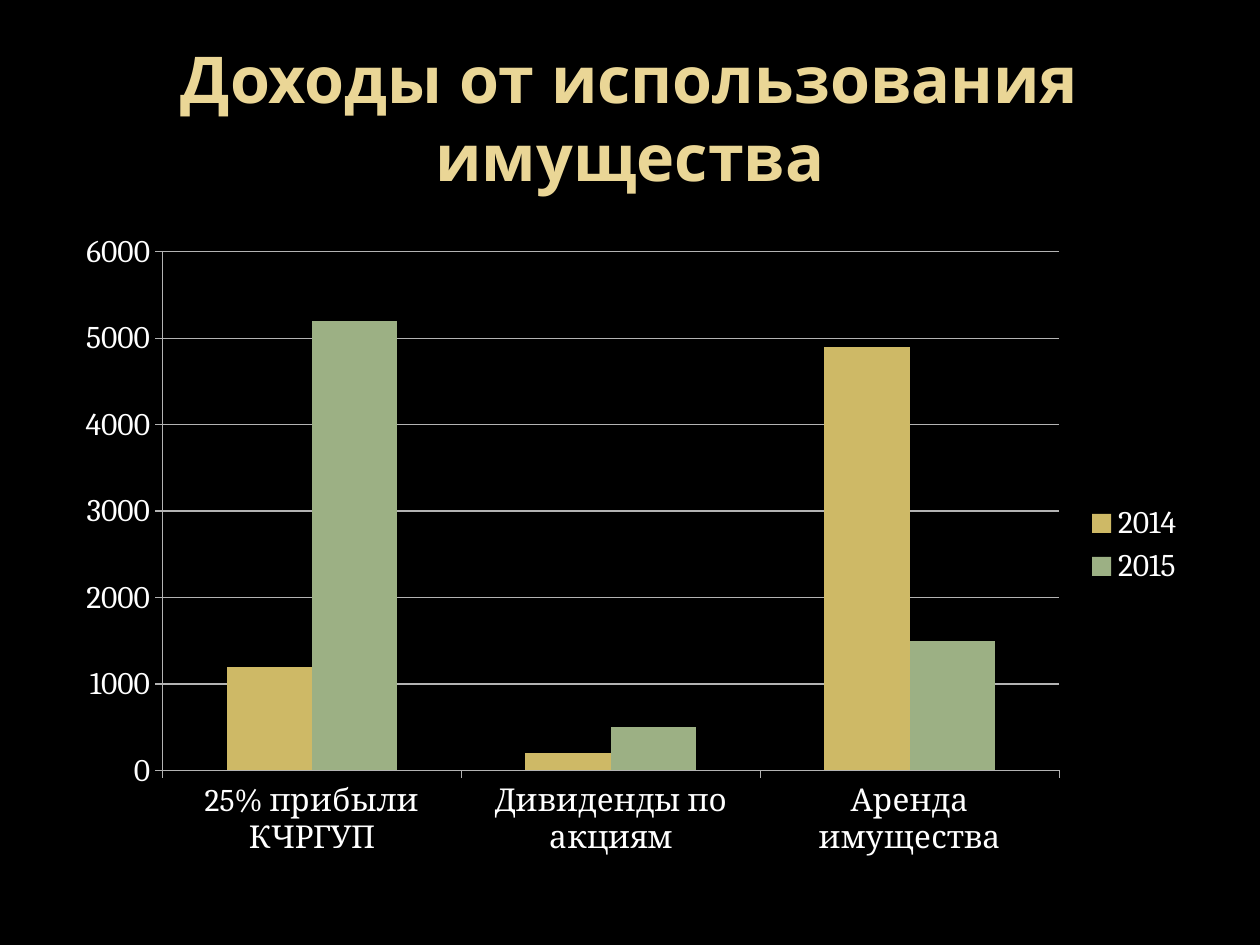
"""Build a slide with a clustered column chart of property income."""
from pptx import Presentation
from pptx import util as u
from pptx.chart import data as chart_data
from pptx.dml import color
from pptx.enum import chart as charts, text

COLORS = {
    "background": "000000",
    "title": "EAD696",
    "text": "FFFFFF",
    "line": "B3B3B3",
    "2014": "CEB966",
    "2015": "9CB084",
}
CATEGORIES = ["25% прибыли КЧРГУП", "Дивиденды по акциям", "Аренда имущества"]
SERIES = {"2014": [1200, 200, 4900], "2015": [5200, 500, 1500]}


def rgb(name):
    return color.RGBColor.from_string(COLORS[name])


presentation = Presentation()
presentation.slide_width, presentation.slide_height = u.Pt(720), u.Pt(540)
slide = presentation.slides.add_slide(presentation.slide_layouts[5])
slide.background.fill.solid()
slide.background.fill.fore_color.rgb = rgb("background")

title = slide.shapes.title
title.left, title.top, title.width, title.height = u.Pt(36), u.Pt(21.6), u.Pt(648), u.Pt(90)
title.text_frame.word_wrap = True
title.text_frame.auto_size = text.MSO_AUTO_SIZE.NONE
title.text_frame.vertical_anchor = text.MSO_ANCHOR.MIDDLE
paragraph = title.text_frame.paragraphs[0]
paragraph.alignment = text.PP_ALIGN.CENTER
run = paragraph.add_run()
run.text = "Доходы от использования имущества"
run.font.name = "Open Sans"
run.font.size = u.Pt(36.9)
run.font.bold = True
run.font.color.rgb = rgb("title")

income = chart_data.CategoryChartData()
income.categories = CATEGORIES
for name, values in SERIES.items():
    income.add_series(name, values)
chart = slide.shapes.add_chart(
    charts.XL_CHART_TYPE.COLUMN_CLUSTERED,
    u.Pt(36), u.Pt(126), u.Pt(648), u.Pt(370.8), income,
).chart
chart.has_title = False
chart.font.name = "Cambria"
chart.font.size = u.Pt(18)
chart.font.color.rgb = rgb("text")
chart.has_legend = True
chart.legend.position = charts.XL_LEGEND_POSITION.RIGHT
chart.legend.include_in_layout = False

plot = chart.plots[0]
plot.gap_width = 150
plot.overlap = 0
plot.vary_by_categories = False
for series in plot.series:
    series.format.fill.solid()
    series.format.fill.fore_color.rgb = rgb(series.name)

value_axis = chart.value_axis
value_axis.minimum_scale, value_axis.maximum_scale, value_axis.major_unit = 0, 6000, 1000
value_axis.has_major_gridlines = True
for axis in (chart.category_axis, value_axis):
    axis.major_tick_mark = charts.XL_TICK_MARK.OUTSIDE
    axis.minor_tick_mark = charts.XL_TICK_MARK.NONE
for lined in (chart.category_axis, value_axis, value_axis.major_gridlines):
    lined.format.line.width = u.Pt(0.75)
    lined.format.line.color.rgb = rgb("line")

presentation.save("out.pptx")
